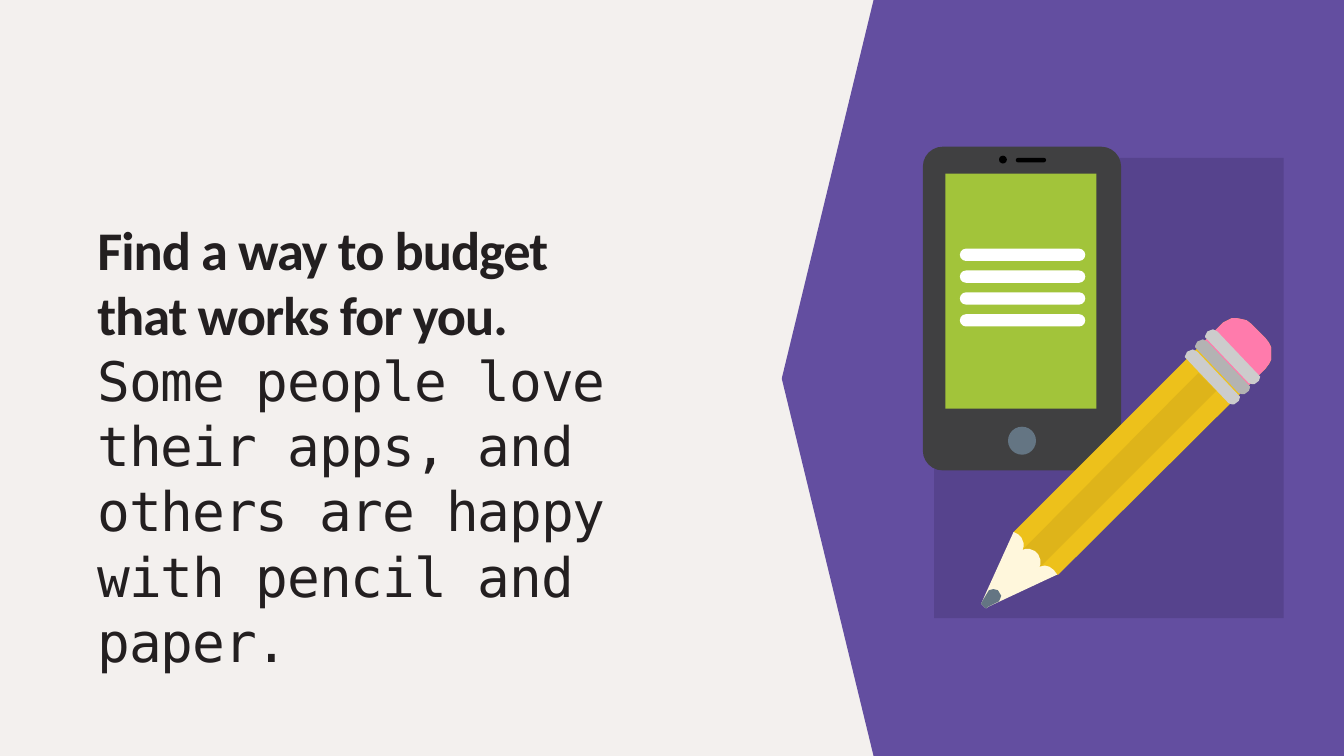
import pptx
import pptx.util
import pptx.dml.color
import pptx.enum.shapes
import pptx.enum.text

Inches = pptx.util.Inches
RGBColor = pptx.dml.color.RGBColor
MSO_SHAPE = pptx.enum.shapes.MSO_SHAPE

CREAM = RGBColor(0xF3, 0xF0, 0xEE)
PURPLE = RGBColor(0x63, 0x4E, 0xA0)
DARK_PURPLE = RGBColor(0x56, 0x43, 0x8D)
INK = RGBColor(0x23, 0x1F, 0x20)
CHARCOAL = RGBColor(0x40, 0x40, 0x41)
GREEN = RGBColor(0xA2, 0xC4, 0x3A)
BLACK = RGBColor(0x00, 0x00, 0x00)
WHITE = RGBColor(0xFF, 0xFF, 0xFF)
SLATE = RGBColor(0x64, 0x75, 0x83)
YELLOW = RGBColor(0xED, 0xC1, 0x1B)
DARK_YELLOW = RGBColor(0xDE, 0xB4, 0x1A)
PINK = RGBColor(0xFF, 0x7B, 0xAC)
LIGHT_GRAY = RGBColor(0xCC, 0xCC, 0xCC)
MID_GRAY = RGBColor(0xB3, 0xB3, 0xB3)
WOOD = RGBColor(0xFF, 0xF7, 0xDC)

presentation = pptx.Presentation()
presentation.slide_width = Inches(12)
presentation.slide_height = Inches(6.75)
slide = presentation.slides.add_slide(presentation.slide_layouts[6])
slide.background.fill.solid()
slide.background.fill.fore_color.rgb = CREAM


def add_preset(kind, left, top, width, height, color):
    shape = slide.shapes.add_shape(
        kind, Inches(left), Inches(top), Inches(width), Inches(height))
    shape.shadow.inherit = False
    shape.fill.solid()
    shape.fill.fore_color.rgb = color
    shape.line.fill.background()
    return shape


def add_polygon(points, color, dx=0, dy=0):
    corners = [(Inches(x + dx), Inches(y + dy)) for x, y in points]
    builder = slide.shapes.build_freeform(*corners[0], scale=1.0)
    builder.add_line_segments(corners[1:], close=True)
    shape = builder.convert_to_shape()
    shape.shadow.inherit = False
    shape.fill.solid()
    shape.fill.fore_color.rgb = color
    shape.line.fill.background()


# Purple side panel
add_polygon([(12, 0), (7.8, 0), (6.98, 3.38), (7.8, 6.75), (12, 6.75)], PURPLE)

# Message
text_box = slide.shapes.add_textbox(
    Inches(0.87), Inches(1.93), Inches(5.3), Inches(4.1))
text_frame = text_box.text_frame
text_frame.word_wrap = True
text_frame.margin_left = text_frame.margin_top = text_frame.margin_bottom = 0
text_frame.margin_right = Inches(0.5)
text_frame.text = (
    "Find a way to budget that works for you.\n"
    "Some people love their apps, and others are happy with pencil and paper.")
text_frame.paragraphs[1].line_spacing = pptx.util.Pt(42)
fonts = [("Calibri", True, -70), ("DejaVu Sans Mono", False, -75)]
for paragraph, (name, bold, spacing) in zip(text_frame.paragraphs, fonts):
    paragraph.alignment = pptx.enum.text.PP_ALIGN.LEFT
    for run in paragraph.runs:
        run.font.name = name
        run.font.size = pptx.util.Pt(35)
        run.font.bold = bold
        run.font.color.rgb = INK
        run._r.get_or_add_rPr().set("spc", str(spacing))

# Sheet of paper
add_preset(MSO_SHAPE.RECTANGLE, 8.34, 1.41, 3.12, 4.11, DARK_PURPLE)

# Phone: body, screen, camera, home button, speaker
body = add_preset(MSO_SHAPE.ROUNDED_RECTANGLE, 8.24, 1.31, 1.77, 2.89, CHARCOAL)
body.adjustments[0] = 0.1
add_preset(MSO_SHAPE.RECTANGLE, 8.44, 1.55, 1.35, 2.1, GREEN)
add_preset(MSO_SHAPE.OVAL, 8.92, 1.39, 0.07, 0.07, BLACK)
add_preset(MSO_SHAPE.OVAL, 9, 3.81, 0.25, 0.25, SLATE)
speaker = add_preset(MSO_SHAPE.ROUNDED_RECTANGLE, 9.07, 1.41, 0.27, 0.04, BLACK)
speaker.adjustments[0] = 0.5

# Lines of text on the phone screen
for row in range(4):
    bar = add_preset(
        MSO_SHAPE.ROUNDED_RECTANGLE, 8.57, 2.22 + row * 0.195, 1.12, 0.11, WHITE)
    bar.adjustments[0] = 0.5

# Pencil barrel and eraser share the rounded end
eraser_end = [
    (11.3, 3.29), (11.33, 3.25), (11.35, 3.21), (11.35, 3.15), (11.35, 3.1),
    (11.33, 3.06), (11.3, 3.02), (11.17, 2.89), (11.13, 2.86), (11.09, 2.85),
    (11.04, 2.84), (11, 2.84), (10.96, 2.86), (10.92, 2.88)]
add_polygon(eraser_end + [(9.05, 4.75), (9.05, 4.83), (9.36, 5.15), (9.45, 5.13)],
            YELLOW)
add_polygon(eraser_end + [(10.76, 3.04), (11.15, 3.44)], PINK)

# Metal bands below the eraser
band = [
    (10.65, 3.12), (10.6, 3.14), (10.58, 3.18), (10.58, 3.19), (10.97, 3.6),
    (11, 3.61), (11.02, 3.61), (11.06, 3.58), (11.07, 3.55), (11.07, 3.54),
    (10.69, 3.14)]
for step, color in enumerate([LIGHT_GRAY, MID_GRAY, LIGHT_GRAY]):
    add_polygon(band, color, dx=step * 0.09, dy=step * -0.09)

# Shaded facet of the barrel
add_polygon([(10.7, 3.33), (9.11, 4.93), (9.27, 5.08), (10.86, 3.49)], DARK_YELLOW)

# Sharpened wood and lead
tip = [(8.82, 5.42), (8.81, 5.43), (8.8, 5.43), (8.77, 5.4), (8.76, 5.39),
       (8.77, 5.37)]
add_polygon(tip + [
    (8.81, 5.28), (9.05, 4.75), (9.09, 4.77), (9.12, 4.8), (9.14, 4.85),
    (9.14, 4.88), (9.13, 4.91), (9.16, 4.9), (9.19, 4.9), (9.24, 4.92),
    (9.27, 4.95), (9.29, 5), (9.29, 5.04), (9.28, 5.06), (9.33, 5.05),
    (9.37, 5.06), (9.41, 5.09), (9.44, 5.13)], WOOD)
add_polygon(tip + [
    (8.83, 5.27), (8.87, 5.26), (8.91, 5.27), (8.94, 5.32), (8.92, 5.37)], SLATE)

presentation.save("out.pptx")
